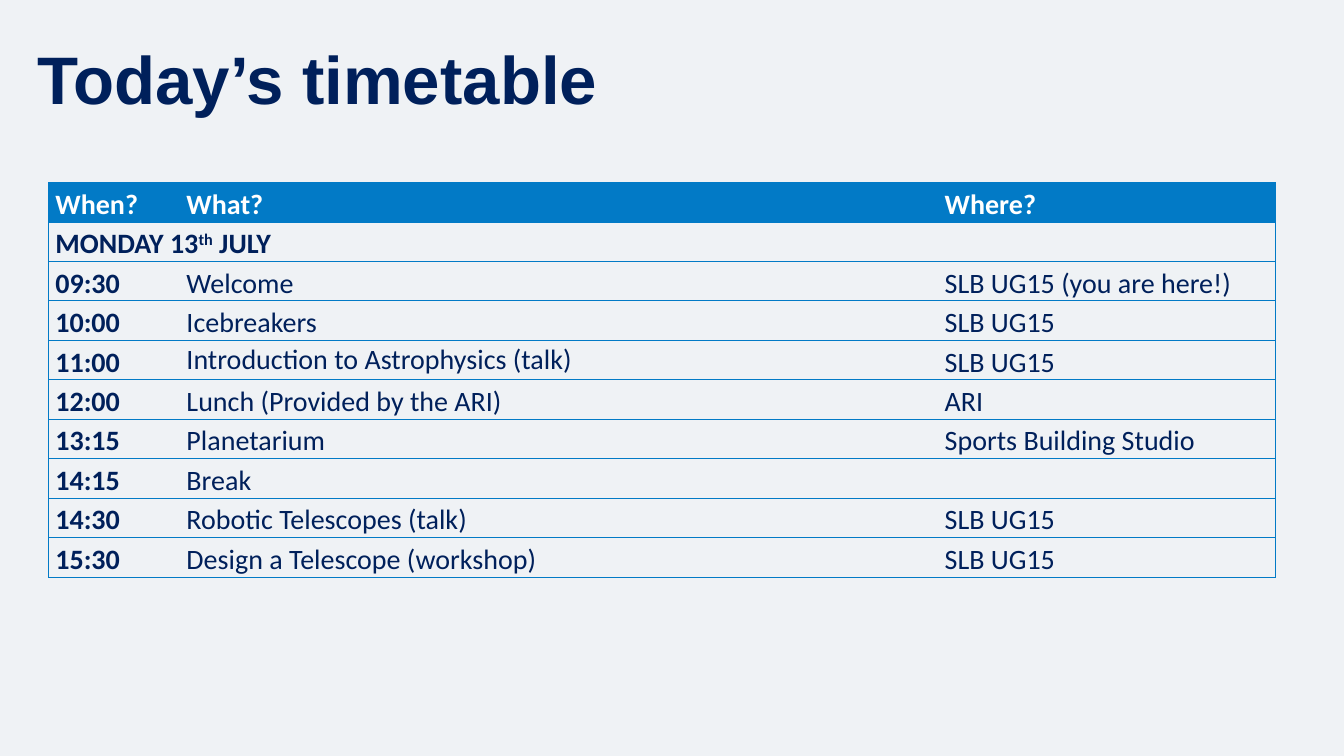
from lxml.etree import SubElement
from pptx import Presentation
from pptx.dml.color import RGBColor
from pptx.enum.text import MSO_ANCHOR, PP_ALIGN
from pptx.oxml.ns import qn
from pptx.util import Inches, Pt

TITLE = "Today’s timetable"
HEAD = ("When?", "What?", "Where?")
DAY = ("MONDAY 13", "th", " JULY")
ROOM = "SLB UG15"
PLAN = [
    ("09:30", "Welcome", ROOM + " (you are here!)"),
    ("10:00", "Icebreakers", ROOM),
    ("11:00", "Introduction to Astrophysics (talk)", ROOM),
    ("12:00", "Lunch (Provided by the ARI)", "ARI"),
    ("13:15", "Planetarium", "Sports Building Studio"),
    ("14:15", "Break", ""),
    ("14:30", "Robotic Telescopes (talk)", ROOM),
    ("15:30", "Design a Telescope (workshop)", ROOM),
]
SINGLE = PLAN[2][1]  # the one entry set without extra line spacing
COLS = (1.3, 7.52, 3.35)
ROW = 0.39
NAVY, BLUE, WHITE, PALE = "00205B", "027AC6", "FFFFFF", "EFF2F5"


def rgb(code):
    return RGBColor.from_string(code)


def style(font, name, size, code, bold):
    font.name, font.size, font.bold = name, Pt(size), bold
    font.color.rgb = rgb(code)


def border(cell, sides):
    """Rule the given sides in blue and clear the others."""
    props = cell._tc.get_or_add_tcPr()
    for i, side in enumerate("LRTB"):
        line = SubElement(props, qn("a:ln" + side), w=str(Pt(0.5)))
        if side in sides:
            fill = SubElement(line, qn("a:solidFill"))
            SubElement(fill, qn("a:srgbClr"), val=BLUE)
        else:
            SubElement(line, qn("a:noFill"))
        props.insert(i, line)


def fill_cell(cell, parts, code, bold):
    cell.margin_left = cell.margin_right = Inches(0.07)
    cell.margin_top = cell.margin_bottom = 0
    para = cell.text_frame.paragraphs[0]
    if parts != (SINGLE,):
        para.line_spacing = 1.15
        para.space_after = Pt(10)
    style(para.font, "Calibri", 20, code, bold)
    for part in parts:
        run = para.add_run()
        run.text = part
        style(run.font, "Calibri", 20, code, bold)
        if part == "th":
            run.font._element.set("baseline", "30000")


def add_title(slide):
    box = slide.shapes.title
    box.left, box.top = Inches(0.27), Inches(0.54)
    box.width, box.height = Inches(8.65), Inches(0.57)
    frame = box.text_frame
    frame.text = TITLE
    frame.word_wrap = True
    frame.vertical_anchor = MSO_ANCHOR.MIDDLE
    para = frame.paragraphs[0]
    para.alignment, para.line_spacing = PP_ALIGN.LEFT, 0.9
    style(para.runs[0].font, "Arial", 48, NAVY, True)


def add_plan(slide):
    rows = [HEAD, (DAY, "", "")] + PLAN
    table = slide.shapes.add_table(
        len(rows), len(COLS), Inches(0.48), Inches(1.81),
        Inches(sum(COLS)), Inches(ROW * len(rows))).table
    table.first_row = table.horz_banding = False
    for col, width in zip(table.columns, COLS):
        col.width = Inches(width)
    for r, row in enumerate(rows):
        table.rows[r].height = Inches(ROW)
        for c, entry in enumerate(row):
            cell = table.cell(r, c)
            parts = entry if entry is DAY else (entry,) if entry else ()
            fill_cell(cell, parts, WHITE if r == 0 else NAVY, r < 2 or c == 0)
            if c < 2 and entry != PLAN[-1][1]:
                cell.vertical_anchor = MSO_ANCHOR.MIDDLE
            if r == 0:
                cell.fill.solid()
                cell.fill.fore_color.rgb = rgb(BLUE)
            else:
                cell.fill.background()
            border(cell, "TB" + ("L", "", "R")[c])
    table.cell(1, 0).merge(table.cell(1, 2))
    # The merged cell carries the right edge of its whole row.
    edge = table.cell(1, 0)._tc.tcPr
    for line in edge.findall(qn("a:lnR")):
        line.remove(line[0])
        fill = SubElement(line, qn("a:solidFill"))
        SubElement(fill, qn("a:srgbClr"), val=BLUE)


def main():
    deck = Presentation()
    deck.slide_width, deck.slide_height = Inches(13.33), Inches(7.5)
    slide = deck.slides.add_slide(deck.slide_layouts[5])
    slide.background.fill.solid()
    slide.background.fill.fore_color.rgb = rgb(PALE)
    add_title(slide)
    add_plan(slide)
    deck.save("out.pptx")


if __name__ == "__main__":
    main()
